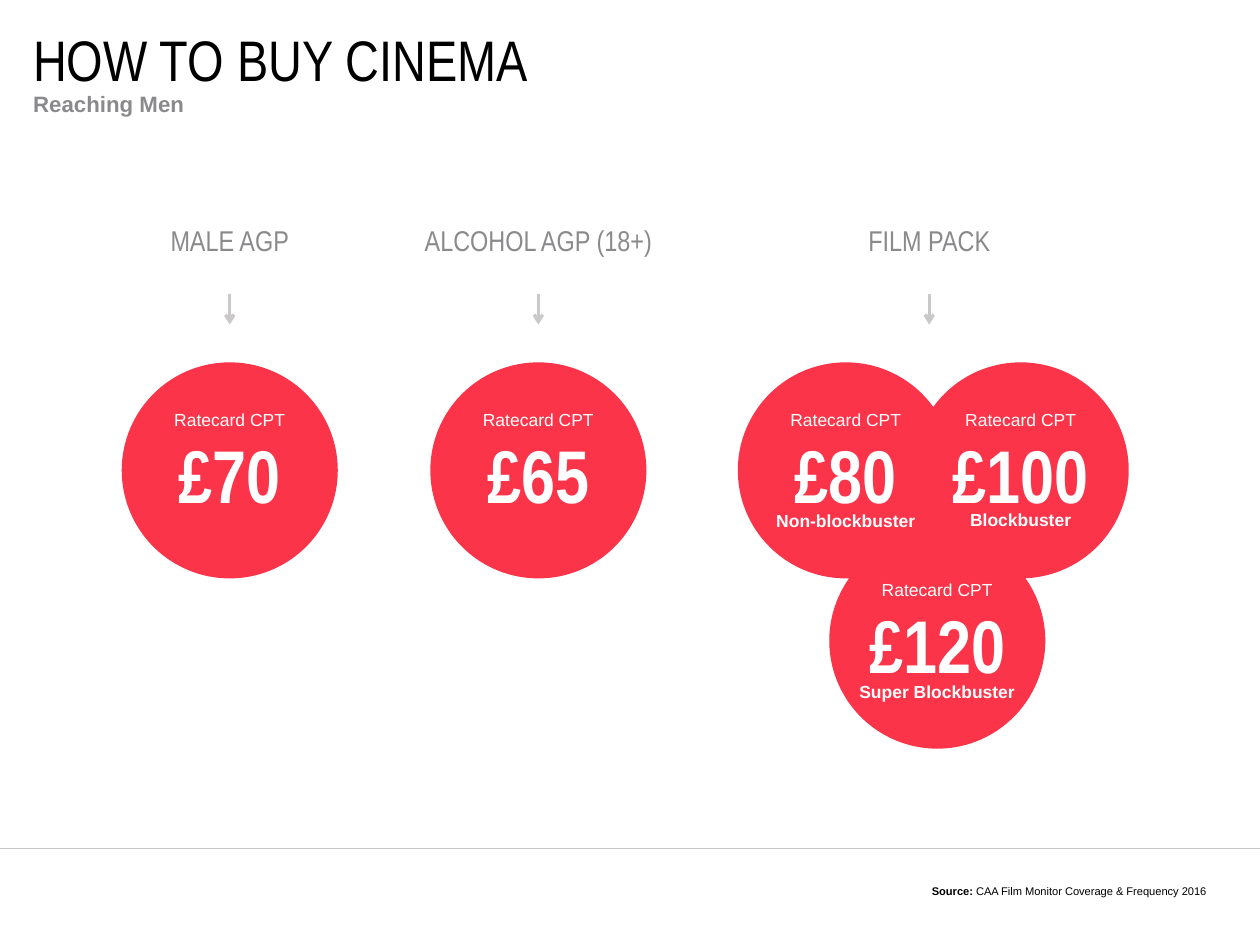
from lxml import etree
from pptx import Presentation
from pptx.dml.color import RGBColor
from pptx.enum import shapes, text
from pptx.oxml.ns import qn
from pptx.util import Inches, Pt

# Content
TITLE = "HOW TO BUY CINEMA"
SUBTITLE = "Reaching Men"
SOURCE = [("Source: ", True), ("CAA Film Monitor Coverage & Frequency 2016 ", False)]
RATE_LABEL = "Ratecard CPT"
ROUTES = [("MALE AGP", 2.01), ("ALCOHOL AGP (18+)", 4.71), ("FILM PACK", 8.13)]  # name, centre x
# price, film type, centre x, circle top, film type's distance from circle top
RATES = [
    ("£70", None, 2.01, 3.17, 0),
    ("£65", None, 4.71, 3.17, 0),
    ("£80", "Non-blockbuster", 7.4, 3.17, 1.25),
    ("£100", "Blockbuster", 8.93, 3.17, 1.24),
    ("£120", "Super Blockbuster", 8.2, 4.66, 1.26),
]

# Format
COLOURS = {"black": "000000", "grey": "8A8A8D", "rule": "CAC8C8",
           "red": "FB3449", "white": "FFFFFF"}
SANS, NARROW = "Arial", "Arial Narrow"
SLIDE_W, SLIDE_H = 28 / 2.54, 21 / 2.54  # 28 by 21 cm
CIRCLE, COLUMN_W = 1.89, 2.38
PAD = (0.1, 0.04)

prs = Presentation()
prs.slide_width, prs.slide_height = Inches(SLIDE_W), Inches(SLIDE_H)
slide = prs.slides.add_slide(prs.slide_layouts[5])


def colour(name):
    return RGBColor.from_string(COLOURS[name])


def write(frame, runs, size, face, ink, align=text.PP_ALIGN.CENTER,
          anchor=text.MSO_ANCHOR.TOP, pad=PAD):
    side, end = map(Inches, pad)
    settings = {"word_wrap": True, "auto_size": text.MSO_AUTO_SIZE.NONE,
                "vertical_anchor": anchor, "margin_left": side, "margin_right": side,
                "margin_top": end, "margin_bottom": end}
    for key, value in settings.items():
        setattr(frame, key, value)
    line = frame.paragraphs[0]
    line.alignment = align
    for words, bold in runs:
        run = line.add_run()
        run.text = words
        for key, value in {"size": Pt(size), "name": face, "bold": bold}.items():
            setattr(run.font, key, value)
        run.font.color.rgb = colour(ink)
    return line


def add_text(left, top, width, height, *args, **options):
    box = slide.shapes.add_textbox(*map(Inches, (left, top, width, height)))
    return write(box.text_frame, *args, **options)


def add_line(x1, y1, x2, y2, weight, arrow=False):
    line = slide.shapes.add_connector(shapes.MSO_CONNECTOR.STRAIGHT,
                                      *map(Inches, (x1, y1, x2, y2)))
    line.line.color.rgb = colour("rule")
    line.line.width = Pt(weight)
    if arrow:
        etree.SubElement(line.line._get_or_add_ln(), qn("a:tailEnd"), type="arrow")
    etree.SubElement(line._element.spPr, qn("a:effectLst"))


# Heading
title = slide.shapes.title
title.left, title.top, title.width, title.height = map(Inches, (0.29, 0.29, 10.18, 0.45))
write(title.text_frame, [(TITLE, False)], 36, NARROW, "black",
      align=text.PP_ALIGN.LEFT, anchor=text.MSO_ANCHOR.MIDDLE, pad=(0, 0))
subtitle = add_text(0.29, 0.74, 10.19, 0.48, [(SUBTITLE, True)], 14, SANS, "grey",
                    align=text.PP_ALIGN.LEFT, pad=(0, 0.05))
subtitle.line_spacing = Pt(16.8)

# Buying routes with arrows
for route, centre in ROUTES:
    add_text(centre - COLUMN_W / 2, 1.83, COLUMN_W, 0.54, [(route, False)], 18, NARROW,
             "grey", anchor=text.MSO_ANCHOR.MIDDLE, pad=(0.1, 0.12))
    add_line(centre, 2.57, centre, 2.84, 2, arrow=True)

# Rate circles
for price, film_type, centre, top, type_drop in RATES:
    circle = slide.shapes.add_shape(
        shapes.MSO_SHAPE.OVAL,
        *map(Inches, (centre - CIRCLE / 2, top, CIRCLE, CIRCLE)))
    circle.shadow.inherit = False
    circle.fill.solid()
    circle.fill.fore_color.rgb = colour("red")
    circle.line.fill.background()
    left = centre - COLUMN_W / 2
    add_text(left, top + 0.37, COLUMN_W, 0.26, [(RATE_LABEL, False)], 11, SANS, "white")
    add_text(left, top + 0.54, COLUMN_W, 0.87, [(price, True)], 47, NARROW, "white")
    if film_type:
        add_text(left, top + type_drop, COLUMN_W, 0.26, [(film_type, True)], 11, SANS, "white")

# Footer
add_line(0, 7.42, SLIDE_W, 7.42, 0.5)
add_text(4.81, 7.68, 5.87, 0.22, SOURCE, 7, SANS, "black",
         align=text.PP_ALIGN.RIGHT, anchor=text.MSO_ANCHOR.BOTTOM, pad=(0.1, 0.05))

prs.save("out.pptx")
